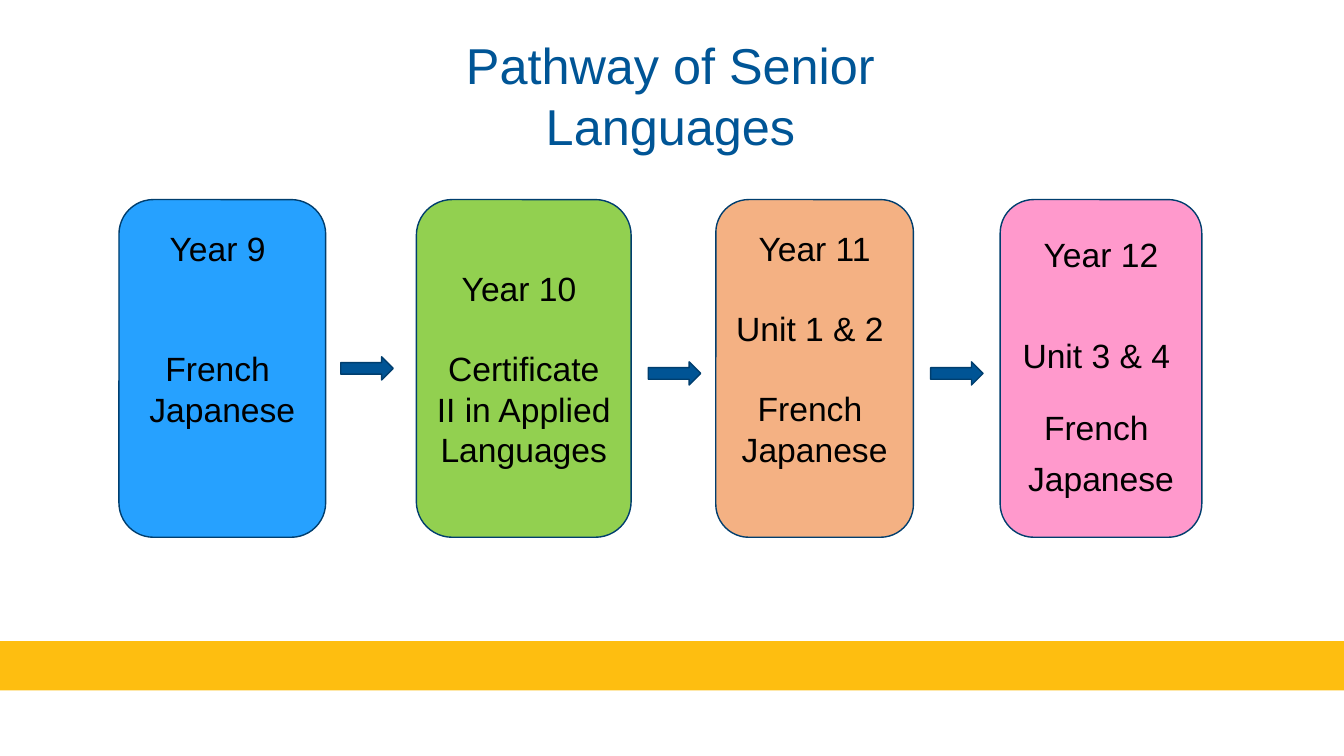
"""Build the senior languages pathway slide."""
from dataclasses import dataclass

import pptx
import pptx.dml.color
import pptx.enum.shapes
import pptx.enum.text
import pptx.util

PX = 9144
SHAPE = pptx.enum.shapes.MSO_SHAPE
ANCHOR = pptx.enum.text.MSO_ANCHOR
CENTER = pptx.enum.text.PP_ALIGN.CENTER


@dataclass(frozen=True)
class Theme:
    font: str = "Arial"
    title_color: str = "005596"
    text_color: str = "000000"
    bar: str = "FEBE10"
    arrow: str = "005495"
    outline: str = "003E6E"
    title_size: int = 36
    text_size: int = 24
    line_pt: float = 28.7


@dataclass(frozen=True)
class Line:
    text: str
    gap_pt: float = 0


@dataclass(frozen=True)
class Stage:
    left: int
    width: int
    fill: str
    lines: tuple[Line, ...]
    bottom_inset: int = 5
    spacing: float = 1.0


@dataclass(frozen=True)
class Arrow:
    left: int
    top: int


THEME = Theme()
GAP = THEME.line_pt
STAGE_TOP, STAGE_HEIGHT = 198, 335
ARROW_WIDTH, ARROW_HEIGHT = 52, 23

STAGES = (
    Stage(118, 205, "26A1FF",
          (Line("Year 9 "), Line("French ", 2 * GAP), Line("Japanese")), bottom_inset=85),
    Stage(413, 213, "92D050",
          (Line("Year 10 "), Line("Certificate II in Applied Languages", GAP))),
    Stage(710, 196, "F4B183",
          (Line("Year 11"), Line("Unit 1 & 2 ", GAP), Line("French ", GAP),
           Line("Japanese")), bottom_inset=45),
    Stage(992, 200, "FF99CC",
          (Line("Year 12"), Line("Unit 3 & 4 ", 46), Line("French ", 26),
           Line("Japanese", 10)), spacing=0.9),
)
ARROWS = (Arrow(338, 354), Arrow(643, 359), Arrow(923, 359))


def px(n: int) -> pptx.util.Emu:
    return pptx.util.Emu(n * PX)


def rgb(color: str) -> pptx.dml.color.RGBColor:
    return pptx.dml.color.RGBColor.from_string(color)


def style_runs(p, size: int, color: str) -> None:
    p.alignment = CENTER
    for r in p.runs:
        r.font.name = THEME.font
        r.font.size = pptx.util.Pt(size)
        r.font.color.rgb = rgb(color)


def add_box(s, kind, left: int, top: int, width: int, height: int, fill: str,
            outlined: bool = True):
    sp = s.shapes.add_shape(kind, px(left), px(top), px(width), px(height))
    sp.shadow.inherit = False
    sp.fill.solid()
    sp.fill.fore_color.rgb = rgb(fill)
    if outlined:
        sp.line.color.rgb = rgb(THEME.outline)
        sp.line.width = pptx.util.Pt(1)
    else:
        sp.line.fill.background()
    return sp


def add_title(s, text: str) -> None:
    sp = s.shapes.title
    sp.left, sp.top, sp.width, sp.height = px(334), px(29), px(662), px(131)
    tf = sp.text_frame
    tf.text = text
    tf.word_wrap = True
    tf.auto_size = pptx.enum.text.MSO_AUTO_SIZE.NONE
    tf.vertical_anchor = ANCHOR.TOP
    style_runs(tf.paragraphs[0], THEME.title_size, THEME.title_color)


def add_stage(s, stage: Stage) -> None:
    sp = add_box(s, SHAPE.ROUNDED_RECTANGLE, stage.left, STAGE_TOP,
                 stage.width, STAGE_HEIGHT, stage.fill)
    tf = sp.text_frame
    tf.word_wrap = True
    tf.vertical_anchor = ANCHOR.MIDDLE
    tf.margin_bottom = px(stage.bottom_inset)
    tf.text = "\n".join(line.text for line in stage.lines)
    for p, line in zip(tf.paragraphs, stage.lines):
        p.line_spacing = stage.spacing
        p.space_before = pptx.util.Pt(line.gap_pt)
        style_runs(p, THEME.text_size, THEME.text_color)


def main() -> None:
    prs = pptx.Presentation()
    prs.slide_width, prs.slide_height = px(1333), px(750)
    s = prs.slides.add_slide(prs.slide_layouts[5])
    add_box(s, SHAPE.RECTANGLE, 0, 636, 1333, 49, THEME.bar, outlined=False)
    add_title(s, "Pathway of Senior Languages")
    for stage in STAGES:
        add_stage(s, stage)
    for arrow in ARROWS:
        add_box(s, SHAPE.RIGHT_ARROW, arrow.left, arrow.top,
                ARROW_WIDTH, ARROW_HEIGHT, THEME.arrow)
    prs.save("out.pptx")


if __name__ == "__main__":
    main()
